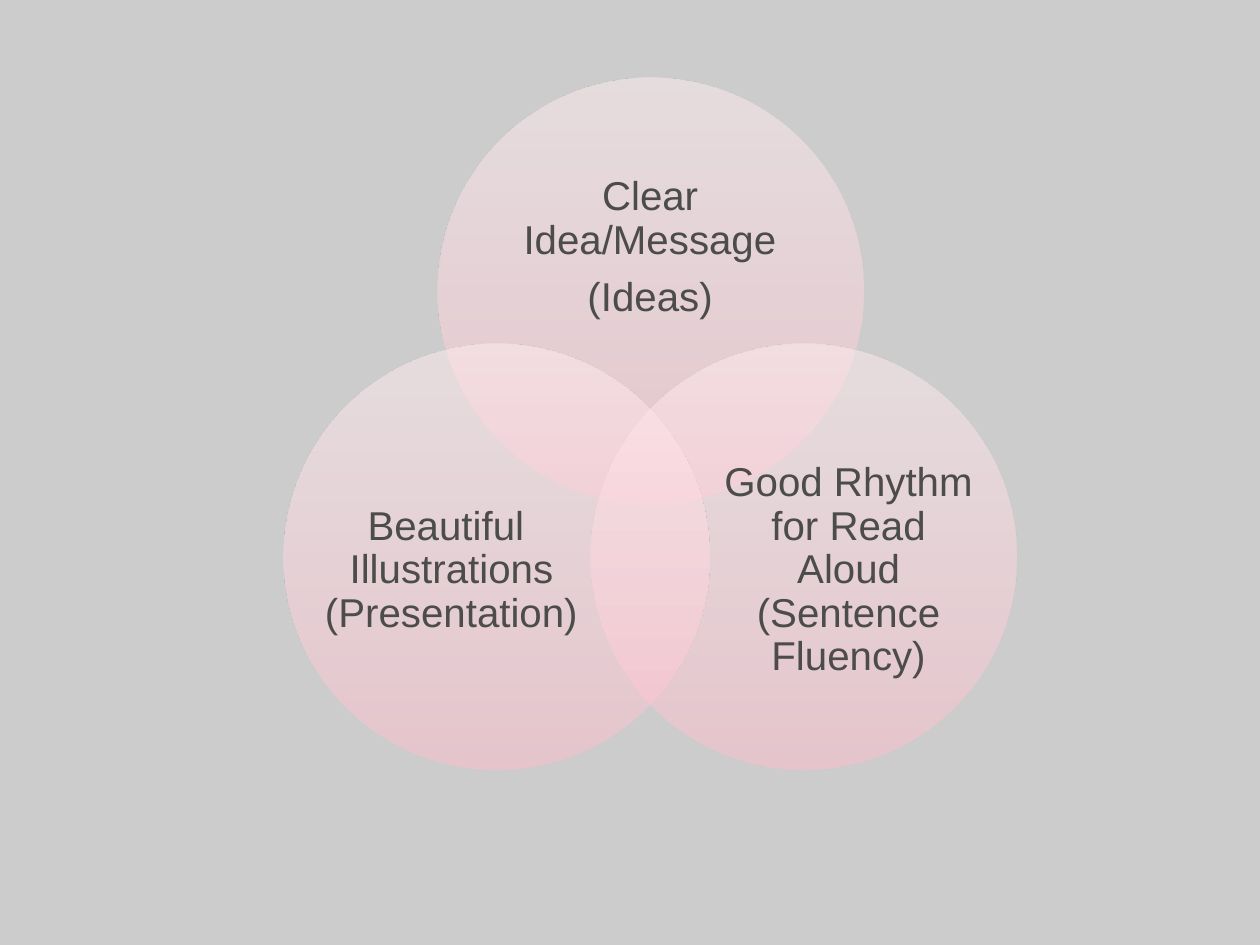
from lxml.etree import SubElement
from pptx import Presentation
from pptx.dml.color import RGBColor
from pptx.enum.shapes import MSO_SHAPE as SHAPE
from pptx.enum.text import MSO_ANCHOR as ANCHOR, PP_ALIGN as ALIGN
from pptx.oxml.ns import qn
from pptx.util import Inches, Pt

# Content: one circle each, as paragraphs of lines
TOP = [["Clear Idea/Message"], ["(Ideas)"]]
RIGHT = [["Good Rhythm for Read Aloud (Sentence Fluency)"]]
LEFT = [["Beautiful ", "Illustrations (Presentation)"]]

BACKGROUND, INK = "CCCCCC", "4C4C4C"
STOPS = [(0, "FFBDCD"), (35, "FFD1DB"), (100, "FFEEF1")]
OPACITY = 50

# Venn geometry in inches
W, H = 10, 7.5
D = 3.38                      # circle diameter
CX, TOP_Y = 5.16, 0.62        # middle axis, top of the upper circle
SHIFT, DROP = 1.22, 2.11      # lower circles: sideways and down
LABEL_W, LABEL_H = 0.6 * D, 0.55 * D
LABEL_INSET = 0.32            # outer edge of a lower circle to its label

# Circle centre x, top y, label box, paragraphs
lower_y = TOP_Y + DROP
label_y = lower_y + 0.87
edge = SHIFT + D / 2 - LABEL_INSET
CIRCLES = [
    (CX, TOP_Y, (CX - 1.24, TOP_Y + 0.59, 2.48, 1.52), TOP),
    (CX + SHIFT, lower_y, (CX + edge - LABEL_W, label_y, LABEL_W, LABEL_H), RIGHT),
    (CX - SHIFT, lower_y, (CX - edge, label_y, LABEL_W, LABEL_H), LEFT),
]


def rgb(value):
    return RGBColor.from_string(value)


def fill_gradient(s):
    s.fill.gradient()
    s.fill.gradient_angle = 90    # from bottom to top
    stops = s.fill._fill._gradFill.find(qn("a:gsLst"))
    for old in list(stops):
        stops.remove(old)
    for pos, value in STOPS:
        gs = SubElement(stops, qn("a:gs"), pos=str(pos * 1000))
        color = SubElement(gs, qn("a:srgbClr"), val=value)
        SubElement(color, qn("a:alpha"), val=str(OPACITY * 1000))


def add_circle(shapes, cx, y):
    s = shapes.add_shape(SHAPE.OVAL, Inches(cx - D / 2), Inches(y), Inches(D), Inches(D))
    s.shadow.inherit = False
    s.line.fill.background()
    fill_gradient(s)


def add_label(shapes, box, paragraphs):
    tf = shapes.add_textbox(*map(Inches, box)).text_frame
    tf.word_wrap = True
    tf.vertical_anchor = ANCHOR.MIDDLE
    tf.margin_left = tf.margin_right = tf.margin_top = tf.margin_bottom = 0
    for i, lines in enumerate(paragraphs):
        p = tf.add_paragraph() if i else tf.paragraphs[0]
        p.alignment, p.line_spacing, p.space_after = ALIGN.CENTER, 0.9, Pt(8)
        for j, line in enumerate(lines):
            if j:
                p.add_line_break()
            r = p.add_run()
            r.text = line
            r.font.name, r.font.size = "Arial", Pt(23)
            r.font.color.rgb = rgb(INK)


prs = Presentation()
prs.slide_width, prs.slide_height = Inches(W), Inches(H)
slide = prs.slides.add_slide(prs.slide_layouts[6])
slide.background.fill.solid()
slide.background.fill.fore_color.rgb = rgb(BACKGROUND)

# Venn diagram as one group
venn = slide.shapes.add_group_shape().shapes
for cx, y, box, paragraphs in CIRCLES:
    add_circle(venn, cx, y)
    add_label(venn, box, paragraphs)

prs.save("out.pptx")
